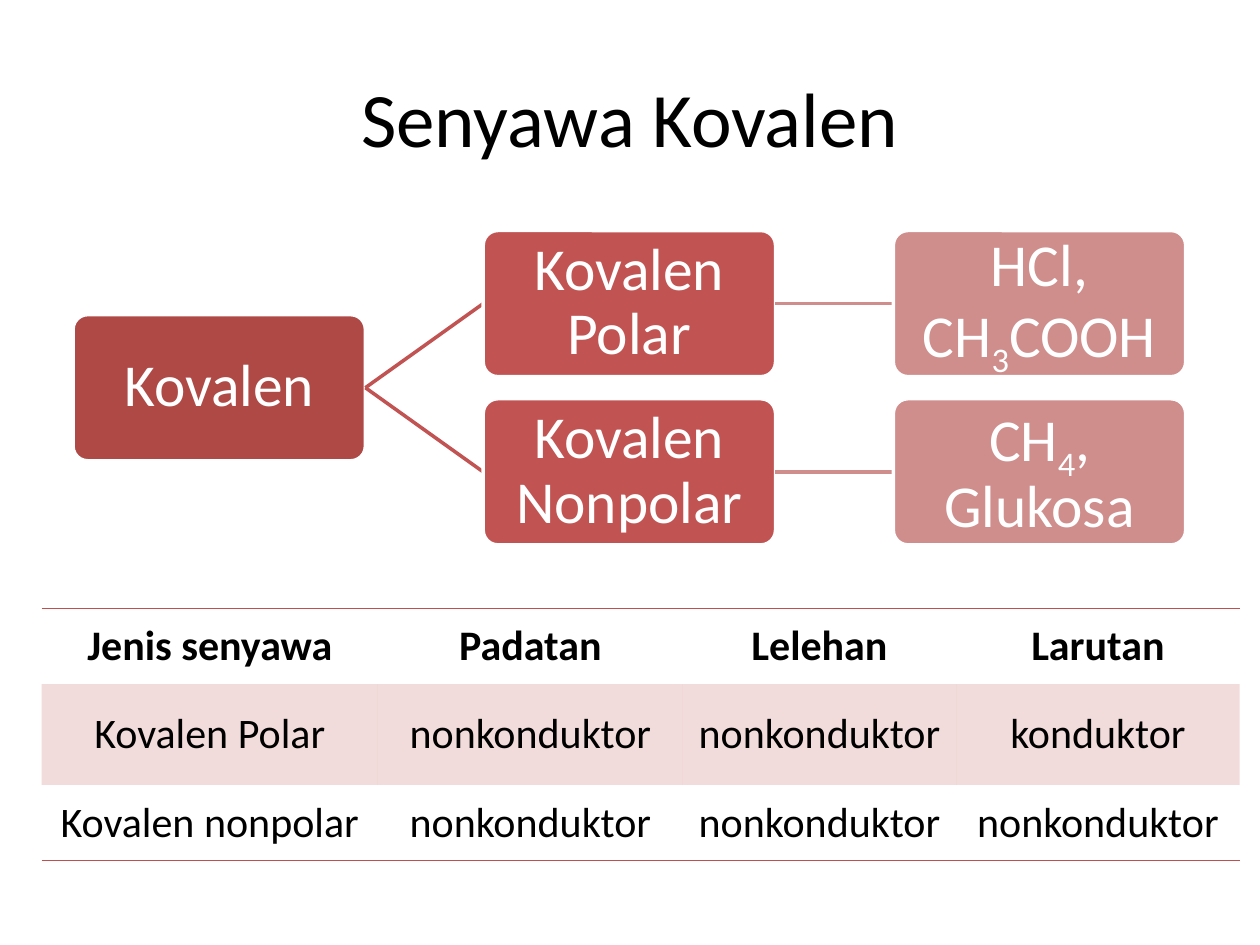
"""Build the slide on covalent compounds: a tree of types above a conductivity table."""
from lxml import etree
from pptx import Presentation
from pptx.dml.color import RGBColor
from pptx.enum import shapes, text
from pptx.oxml.ns import qn
from pptx.util import Inches, Pt

TITLE = "Senyawa Kovalen"
# Text between bars is subscript.
NODES = {
    "root": ("Kovalen", 0, 0.5, None),
    "polar": ("Kovalen Polar", 1, 0, "root"),
    "polar ex": ("HCl, CH|3|COOH", 2, 0, "polar"),
    "non": ("Kovalen Nonpolar", 1, 1, "root"),
    "non ex": ("CH|4|, Glukosa", 2, 1, "non"),
}
ROWS = [
    ("Jenis senyawa", "Padatan", "Lelehan", "Larutan"),
    ("Kovalen Polar", "nonkonduktor", "nonkonduktor", "konduktor"),
    ("Kovalen nonpolar", "nonkonduktor", "nonkonduktor", "nonkonduktor"),
]
WIDTHS = (2.67, 2.42, 2.17, 2.25)
HEIGHTS = (0.6, 0.8, 0.6)
EDGES = [("lnT", "lnB"), (), ("lnB",)]
COLORS = {"ink": "000000", "paper": "FFFFFF", "rule": "C0504D"}
LEVELS = ("AE4946", "C15452", "CF8D8C")
LEFT, TOP, WIDE, HIGH = 0.58, 1.83, 2.32, 1.16
STEP_X, STEP_Y = 3.255, 1.335


def rgb(name):
    return RGBColor.from_string(COLORS.get(name, name))


def write(frame, words, size=24, color="ink", bold=False, space=None):
    frame.word_wrap = True
    frame.vertical_anchor = text.MSO_ANCHOR.MIDDLE
    para = frame.paragraphs[0]
    para.alignment = text.PP_ALIGN.CENTER
    para.line_spacing = space
    for i, part in enumerate(words.split("|")):
        run = para.add_run()
        run.text = part
        font = run.font
        font.name, font.size, font.bold = "Calibri", Pt(size), bold
        font.color.rgb = rgb(color)
        if i % 2:
            run._r.get_or_add_rPr().set("baseline", "-25000")


def add_node(slide, words, col, row):
    box = slide.shapes.add_shape(
        shapes.MSO_SHAPE.ROUNDED_RECTANGLE, Inches(LEFT + col * STEP_X),
        Inches(TOP + row * STEP_Y), Inches(WIDE), Inches(HIGH))
    box.adjustments[0] = 0.1
    box.shadow.inherit = False
    box.fill.solid()
    box.fill.fore_color.rgb = rgb(LEVELS[col])
    box.line.color.rgb = rgb("paper")
    box.line.width = Pt(2)
    frame = box.text_frame
    frame.margin_left = frame.margin_right = Inches(0.02)
    frame.margin_top = frame.margin_bottom = Inches(0.02)
    write(frame, words, size=34, color="paper", space=0.9)
    return box


def join(slide, start, end, color):
    line = slide.shapes.add_connector(shapes.MSO_CONNECTOR.STRAIGHT, 0, 0, 0, 0)
    line.begin_connect(start, 3)
    line.end_connect(end, 1)
    line.line.color.rgb = rgb(color)
    line.line.width = Pt(2)
    etree.SubElement(line._element.spPr, qn("a:effectLst"))
    end._element.addprevious(line._element)


def set_edges(cell, shown):
    props = cell._tc.get_or_add_tcPr()
    for side in ("lnL", "lnR", "lnT", "lnB"):
        edge = etree.SubElement(props, qn("a:" + side), w=str(Pt(1)))
        if side in shown:
            fill = etree.SubElement(edge, qn("a:solidFill"))
            etree.SubElement(fill, qn("a:srgbClr"), val=COLORS["rule"])
        else:
            etree.SubElement(edge, qn("a:noFill"))


def add_grid(slide):
    grid = slide.shapes.add_table(
        len(ROWS), len(WIDTHS), Inches(0.33), Inches(4.83),
        Inches(sum(WIDTHS)), Inches(sum(HEIGHTS))).table
    grid.horz_banding = False
    for col, wide in zip(grid.columns, WIDTHS):
        col.width = Inches(wide)
    for r, row in enumerate(ROWS):
        grid.rows[r].height = Inches(HEIGHTS[r])
        for c, words in enumerate(row):
            cell = grid.cell(r, c)
            write(cell.text_frame, words, bold=r == 0)
            cell.vertical_anchor = text.MSO_ANCHOR.MIDDLE
            set_edges(cell, EDGES[r])
            if r == 1:
                cell.fill.solid()
                cell.fill.fore_color.rgb = rgb("rule")
                tint = cell._tc.tcPr.find(qn("a:solidFill"))[0]
                etree.SubElement(tint, qn("a:alpha"), val="20000")
            else:
                cell.fill.background()


def main():
    deck = Presentation()
    deck.slide_width, deck.slide_height = Inches(10), Inches(7.5)
    slide = deck.slides.add_slide(deck.slide_layouts[5])
    title = slide.shapes.title
    title.left, title.top = Inches(0.5), Inches(0.3)
    title.width, title.height = Inches(9), Inches(1.25)
    write(title.text_frame, TITLE, size=44)
    boxes = {}
    for key, (words, col, row, parent) in NODES.items():
        boxes[key] = add_node(slide, words, col, row)
        if parent:
            join(slide, boxes[parent], boxes[key], LEVELS[col])
    add_grid(slide)
    deck.save("out.pptx")


if __name__ == "__main__":
    main()
